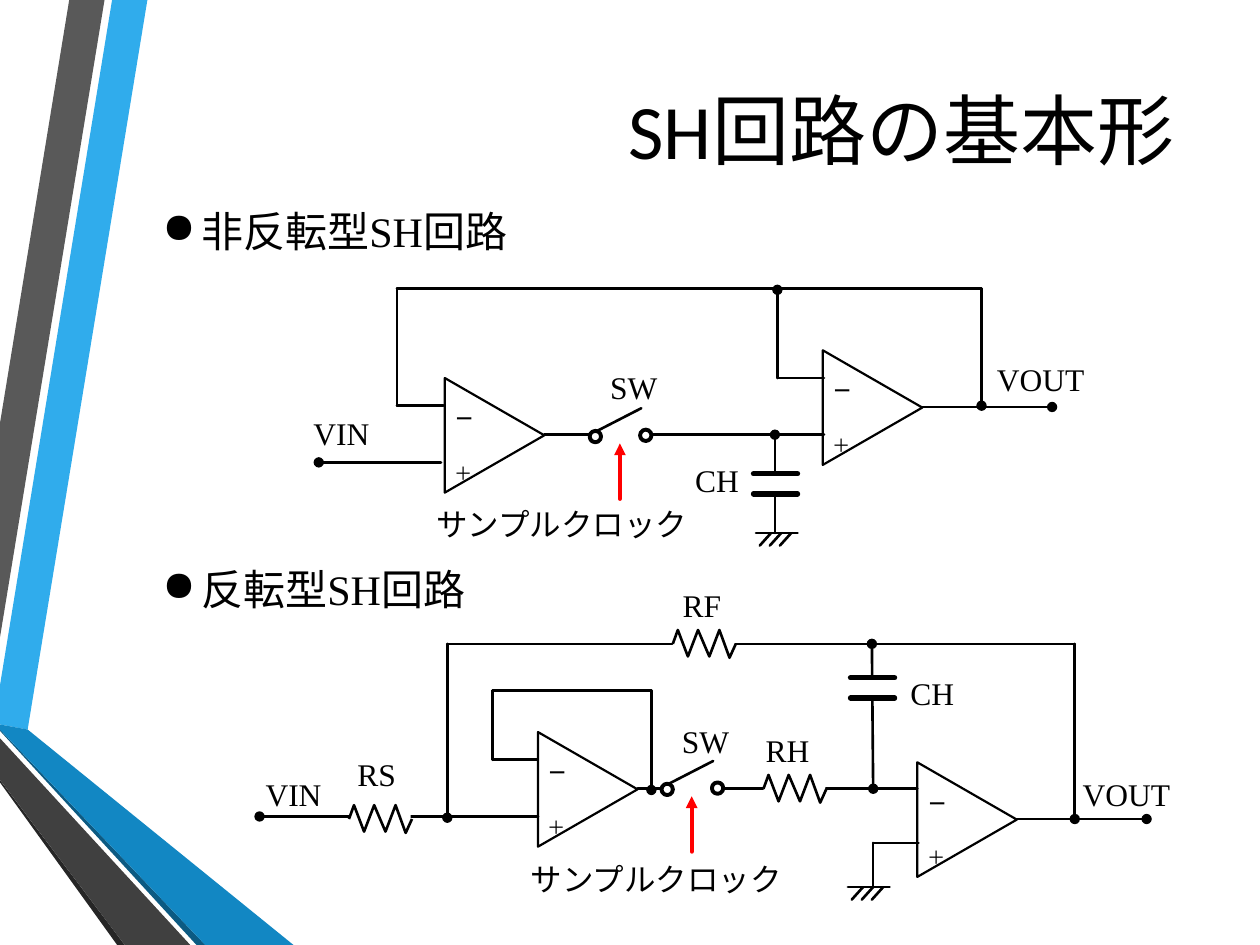
from dataclasses import dataclass

from lxml.etree import SubElement
from pptx import Presentation
from pptx.dml.color import RGBColor
from pptx.enum.shapes import MSO_CONNECTOR, MSO_SHAPE
from pptx.enum.text import MSO_ANCHOR, PP_ALIGN
from pptx.oxml.ns import qn
from pptx.util import Cm, Pt


@dataclass(frozen=True)
class Theme:
    ink: str = "000000"
    paper: str = "FFFFFF"
    clock: str = "FF0000"
    serif: str = "Times New Roman"
    sign: str = "Arial"
    heading: str = "Calibri"
    title_size: float = 44
    bullet_size: float = 24
    minus_size: float = 20
    label_size: float = 18
    outline: float = 1.25
    wire: float = 1.5
    bold_line: float = 2.25
    plate: float = 3


@dataclass(frozen=True)
class Band:
    color: str
    points: tuple


@dataclass(frozen=True)
class Wire:
    x1: float
    y1: float
    x2: float
    y2: float
    head: str = ""
    tail: str = ""
    width: float = Theme.wire
    color: str = Theme.ink


@dataclass(frozen=True)
class Label:
    text: str
    x: float
    y: float
    width: float = 0.94


@dataclass(frozen=True)
class Circuit:
    """Part positions; x and y give each part's upper left corner."""
    amplifiers: tuple
    wires: tuple
    switch: tuple
    capacitor: tuple
    ground: tuple
    labels: tuple
    resistors: tuple = ()


THEME = Theme()

BANDS = (
    Band("30ACEC", ((0, 5.44), (0, 5.75), (0.22, 5.79), (1.17, 0), (0.89, 0))),
    Band("595959", ((0.83, 0), (0.55, 0), (0, 3.36), (0, 5.06))),
    Band("262626", ((0, 6.19), (0, 6.21), (0.93, 7.5), (0.99, 7.5))),
    Band("0C5A82", ((0, 5.79), (0, 5.8), (1.56, 7.5), (1.63, 7.5))),
    Band("1287C3", ((0, 5.79), (1.63, 7.5), (2.33, 7.5), (0.22, 5.79), (0, 5.75))),
    Band("404040", ((0, 6.19), (0.99, 7.5), (1.51, 7.5), (0, 5.86))),
)
ZIGZAG = ((0, 0.11), (0.04, 0), (0.12, 0.21), (0.2, 0), (0.29, 0.21),
          (0.37, 0), (0.45, 0.22), (0.5, 0.11))

NON_INVERTING = Circuit(
    amplifiers=((3.47, 3.06), (6.47, 2.84)),
    wires=(
        Wire(4.32, 3.45, 6.54, 3.45),
        Wire(7.79, 3.22, 7.79, 2.29, head="oval"),
        Wire(3.15, 2.29, 7.79, 2.29),
        Wire(3.15, 3.22, 3.15, 2.29),
        Wire(3.15, 3.22, 3.52, 3.22),
        Wire(2.53, 3.67, 3.5, 3.67, head="oval"),
        Wire(7.32, 3.23, 8.35, 3.23, tail="oval"),
        Wire(6.17, 3, 6.17, 2.3, tail="oval"),
        Wire(6.17, 3, 6.54, 3),
        Wire(6.15, 4.23, 6.15, 3.45, tail="oval"),
    ),
    switch=(4.72, 3.39),
    capacitor=(5.93, 3.76),
    ground=(6, 4.23),
    labels=(Label("VOUT", 7.79, 2.81), Label("SW", 4.56, 2.87),
            Label("VIN", 2.24, 3.24), Label("CH", 5.22, 3.61),
            Label("サンプルクロック", 3.29, 3.96, 2.34)),
)

INVERTING = Circuit(
    amplifiers=((4.21, 5.87), (7.22, 6.11)),
    wires=(
        Wire(5.06, 6.26, 7.28, 6.26),
        Wire(8.53, 6.5, 8.53, 5.11, head="oval"),
        Wire(3.55, 5.11, 8.53, 5.11),
        Wire(3.55, 6.49, 3.55, 5.11, head="oval"),
        Wire(3.91, 6.03, 4.26, 6.03),
        Wire(2.06, 6.48, 4.27, 6.48, head="oval"),
        Wire(8.07, 6.5, 9.1, 6.5, tail="oval"),
        Wire(6.93, 6.26, 6.92, 5.11, head="oval", tail="oval"),
        Wire(6.93, 6.69, 7.29, 6.69),
        Wire(6.93, 7.04, 6.93, 6.69),
        Wire(5.17, 6.27, 5.17, 5.48, head="oval"),
        Wire(3.91, 6.03, 3.91, 5.48),
        Wire(3.91, 5.48, 5.17, 5.48),
    ),
    switch=(5.29, 6.19),
    capacitor=(6.7, 5.38),
    ground=(6.73, 7.04),
    labels=(Label("VOUT", 8.47, 6.1), Label("SW", 5.13, 5.68),
            Label("VIN", 1.86, 6.1), Label("CH", 6.93, 5.3),
            Label("サンプルクロック", 4.04, 6.78, 2.34), Label("RF", 5.1, 4.6),
            Label("RH", 5.78, 5.75), Label("RS", 2.52, 5.94)),
    resistors=((5.34, 5), (6.06, 6.15), (2.77, 6.39)),
)


def grid(value: float) -> Cm:
    """Length of a number of 2.54 cm grid units."""
    return Cm(value * 2.54)


def add_part(page, kind, x: float, y: float, width: float, height: float, line: float = 0):
    """White preset shape, outlined when a line width is given."""
    part = page.shapes.add_shape(kind, grid(x), grid(y), grid(width), grid(height))
    part.shadow.inherit = False
    part.fill.solid()
    part.fill.fore_color.rgb = RGBColor.from_string(THEME.paper)
    if line:
        part.line.color.rgb = RGBColor.from_string(THEME.ink)
        part.line.width = Pt(line)
    else:
        part.line.fill.background()
    return part


def add_outline(page, points, closed: bool):
    corners = [(grid(x), grid(y)) for x, y in points]
    builder = page.shapes.build_freeform(*corners[0])
    builder.add_line_segments(corners[1:], close=closed)
    outline = builder.convert_to_shape()
    outline.shadow.inherit = False
    return outline


def add_band(page, band: Band) -> None:
    shape = add_outline(page, band.points, True)
    shape.fill.solid()
    shape.fill.fore_color.rgb = RGBColor.from_string(band.color)
    shape.line.fill.background()


def add_wire(page, wire: Wire) -> None:
    line = page.shapes.add_connector(
        MSO_CONNECTOR.STRAIGHT, *map(grid, (wire.x1, wire.y1, wire.x2, wire.y2)))
    line.line.color.rgb = RGBColor.from_string(wire.color)
    line.line.width = Pt(wire.width)
    properties = line.element.spPr
    stroke = properties.find(qn("a:ln"))
    stroke.set("cap", "rnd")
    for tag, kind in (("a:headEnd", wire.head), ("a:tailEnd", wire.tail)):
        if kind:
            SubElement(stroke, qn(tag), type=kind)
    SubElement(properties, qn("a:effectLst"))


def add_text(page, text: str, x: float, y: float, width: float, height: float,
             size: float, font: str, align=PP_ALIGN.CENTER, bold: bool = False):
    box = page.shapes.add_textbox(grid(x), grid(y), grid(width), grid(height))
    box.text_frame.word_wrap = True
    para = box.text_frame.paragraphs[0]
    para.alignment = align
    span = para.add_run()
    span.text = text
    span.font.size = Pt(size)
    span.font.name = font
    span.font.bold = bold
    span.font.color.rgb = RGBColor.from_string(THEME.ink)
    return box


def add_bullet(page, text: str, y: float) -> None:
    box = add_text(page, text, 1.19, y, 8.58, 0.56, THEME.bullet_size, THEME.serif, PP_ALIGN.LEFT)
    properties = box.text_frame.paragraphs[0]._p.get_or_add_pPr()
    properties.set("marL", str(grid(0.31)))
    properties.set("indent", str(-grid(0.31)))
    SubElement(properties, qn("a:buChar"), char="●")


def add_amplifier(page, x: float, y: float) -> None:
    add_part(page, MSO_SHAPE.ISOSCELES_TRIANGLE, x, y, 0.91, 0.79, THEME.outline).rotation = 90
    for sign, dy, size, bold in (("－", -0.07, THEME.minus_size, True),
                                 ("＋", 0.39, THEME.label_size, False)):
        box = add_text(page, sign, x + 0.04, y + dy, 0.29, 0.3, size, THEME.sign, bold=bold)
        box.text_frame.paragraphs[0].runs[0].font._element.set("baseline", "-25000")


def add_switch(page, x: float, y: float) -> None:
    """Open switch with its sample clock arrow."""
    add_part(page, MSO_SHAPE.RECTANGLE, x, y, 0.41, 0.13)
    add_wire(page, Wire(x, y + 0.04, x + 0.37, y - 0.15))
    for dx, dy in ((0.36, 0.02), (-0.04, 0.03)):
        add_part(page, MSO_SHAPE.OVAL, x + dx, y + dy, 0.09, 0.09, THEME.bold_line)
    add_wire(page, Wire(x + 0.2, y + 0.57, x + 0.2, y + 0.13, tail="triangle",
                        width=THEME.bold_line, color=THEME.clock))


def add_capacitor(page, x: float, y: float) -> None:
    add_part(page, MSO_SHAPE.RECTANGLE, x, y, 0.41, 0.16)
    for level in (y, y + 0.16):
        add_wire(page, Wire(x + 0.05, level, x + 0.4, level, width=THEME.plate))


def add_ground(page, x: float, y: float) -> None:
    add_wire(page, Wire(x, y, x + 0.33, y))
    for step in range(3):
        foot = x + 0.03 + 0.08 * step
        add_wire(page, Wire(foot, y + 0.1, foot + 0.09, y))


def add_resistor(page, x: float, y: float) -> None:
    add_part(page, MSO_SHAPE.RECTANGLE, x, y, 0.49, 0.22)
    zigzag = add_outline(page, [(x + dx, y + dy) for dx, dy in ZIGZAG], False)
    zigzag.fill.background()
    zigzag.line.color.rgb = RGBColor.from_string(THEME.ink)
    zigzag.line.width = Pt(THEME.wire)


def add_circuit(page, circuit: Circuit) -> None:
    for place in circuit.amplifiers:
        add_amplifier(page, *place)
    for wire in circuit.wires:
        add_wire(page, wire)
    add_switch(page, *circuit.switch)
    add_capacitor(page, *circuit.capacitor)
    add_ground(page, *circuit.ground)
    for place in circuit.resistors:
        add_resistor(page, *place)
    for label in circuit.labels:
        add_text(page, label.text, label.x, label.y, label.width, 0.4,
                 THEME.label_size, THEME.serif)


def main() -> None:
    deck = Presentation()
    deck.slide_width, deck.slide_height = Cm(25.4), Cm(19.05)
    page = deck.slides.add_slide(deck.slide_layouts[6])
    for band in BANDS:
        add_band(page, band)
    title = add_text(page, "SH回路の基本形", 0.92, 0.46, 8.5, 1.12,
                     THEME.title_size, THEME.heading, PP_ALIGN.RIGHT)
    title.text_frame.vertical_anchor = MSO_ANCHOR.MIDDLE
    add_bullet(page, "非反転型SH回路", 1.58)
    add_bullet(page, "反転型SH回路", 4.42)
    for circuit in (NON_INVERTING, INVERTING):
        add_circuit(page, circuit)
    deck.save("out.pptx")


if __name__ == "__main__":
    main()
